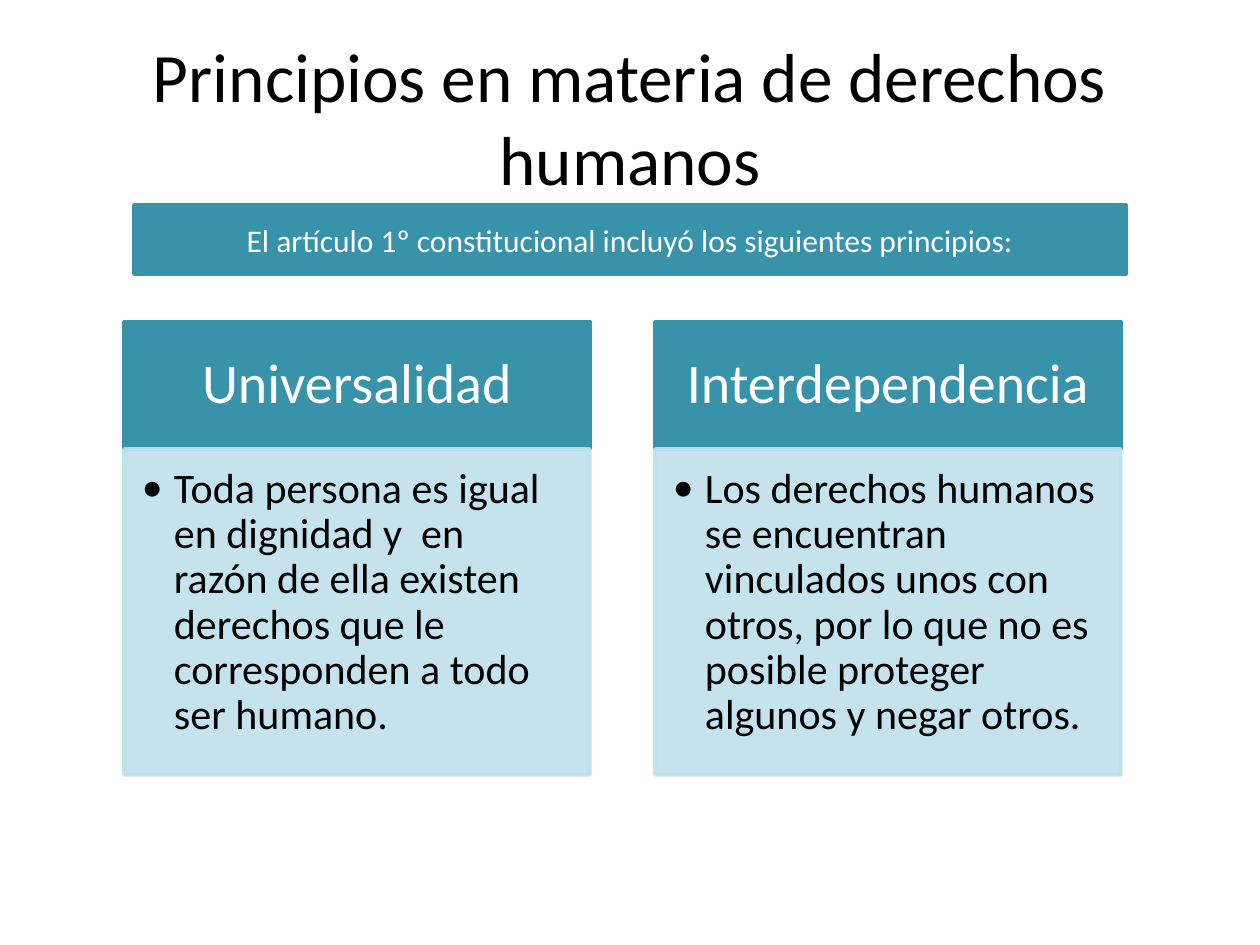
from dataclasses import dataclass

from lxml import etree
from pptx import Presentation
from pptx.dml.color import RGBColor
from pptx.enum.shapes import MSO_SHAPE
from pptx.enum.text import MSO_ANCHOR, PP_ALIGN
from pptx.oxml.ns import qn
from pptx.util import Inches, Pt

RECTANGLE = MSO_SHAPE.RECTANGLE
TOP, MIDDLE = MSO_ANCHOR.TOP, MSO_ANCHOR.MIDDLE
LEFT, CENTER = PP_ALIGN.LEFT, PP_ALIGN.CENTER

TITLE = "Principios en materia de derechos humanos"
BANNER = "El artículo 1º constitucional incluyó los siguientes principios:"
PRINCIPLES = [
    ("Universalidad",
     "Toda persona es igual en dignidad y  en razón de ella existen derechos "
     "que le corresponden a todo ser humano."),
    ("Interdependencia",
     "Los derechos humanos se encuentran vinculados unos con otros, por lo que "
     "no es posible proteger algunos y negar otros."),
]


@dataclass(frozen=True)
class Theme:
    font: str = "Calibri"
    teal: str = "3792AA"
    pale: str = "BFE1EB"
    black: str = "000000"
    white: str = "FFFFFF"
    title: float = 39.6
    heading: int = 32
    body: int = 24
    banner: int = 18
    line: int = 2
    opacity: int = 90


THEME = Theme()
PAGE_WIDTH, PAGE_HEIGHT = 1260, 945
CARD_LEFT, CARD_TOP, CARD_WIDTH, CARD_GAP = 124, 322, 466, 65
HEADING_HEIGHT, BODY_HEIGHT = 127, 326
BULLET_INDENT = 32
PLAIN_INSETS = (13, 6, 13, 6)
HEADING_INSETS = (18, 18, 18, 18)
BODY_INSETS = (18, 18, 24, 26)


def px(value):
    return round(value * Inches(1) / 126)


def assign(target, values):
    for name, value in values.items():
        setattr(target, name, value)


def write(box, text, size, color, insets=PLAIN_INSETS, anchor=MIDDLE,
          align=CENTER, spacing=1.0):
    frame = box.text_frame
    left, top, right, bottom = map(px, insets)
    assign(frame, {"word_wrap": True, "vertical_anchor": anchor,
                   "margin_left": left, "margin_top": top,
                   "margin_right": right, "margin_bottom": bottom})
    para = frame.paragraphs[0]
    assign(para, {"alignment": align, "line_spacing": spacing})
    span = para.add_run()
    span.text = text
    assign(span.font, {"name": THEME.font, "size": Pt(size)})
    span.font.color.rgb = RGBColor.from_string(color)
    return para


def add_panel(page, place, color, opacity=100):
    panel = page.shapes.add_shape(RECTANGLE, *map(px, place))
    panel.shadow.inherit = False
    panel.line.width = Pt(THEME.line)
    panel.fill.solid()
    for paint in (panel.fill.fore_color, panel.line.color):
        paint.rgb = RGBColor.from_string(color)
    if opacity < 100:
        for tint in panel._element.spPr.iter(qn("a:srgbClr")):
            etree.SubElement(tint, qn("a:alpha"), val=str(opacity * 1000))
    return panel


def add_bullet(para):
    properties = para._p.get_or_add_pPr()
    indent = px(BULLET_INDENT)
    properties.set("marL", str(indent))
    properties.set("indent", str(-indent))
    etree.SubElement(properties, qn("a:buFont"), typeface=THEME.font)
    etree.SubElement(properties, qn("a:buChar"), char="•")


def add_card(page, left, heading, body):
    top = add_panel(page, (left, CARD_TOP, CARD_WIDTH, HEADING_HEIGHT), THEME.teal)
    write(top, heading, THEME.heading, THEME.white, HEADING_INSETS, spacing=0.9)
    place = (left, CARD_TOP + HEADING_HEIGHT, CARD_WIDTH, BODY_HEIGHT)
    bottom = add_panel(page, place, THEME.pale, THEME.opacity)
    add_bullet(write(bottom, body, THEME.body, THEME.black, BODY_INSETS,
                     TOP, LEFT, 0.9))


def main():
    deck = Presentation()
    assign(deck, {"slide_width": px(PAGE_WIDTH), "slide_height": px(PAGE_HEIGHT)})
    page = deck.slides.add_slide(deck.slide_layouts[6])
    title = page.shapes.add_textbox(*map(px, (63, 38, 1134, 157)))
    write(title, TITLE, THEME.title, THEME.black)
    for index, (heading, body) in enumerate(PRINCIPLES):
        add_card(page, CARD_LEFT + index * (CARD_WIDTH + CARD_GAP), heading, body)
    banner = add_panel(page, (134, 205, 992, 69), THEME.teal)
    write(banner, BANNER, THEME.banner, THEME.white)
    deck.save("out.pptx")


if __name__ == "__main__":
    main()
